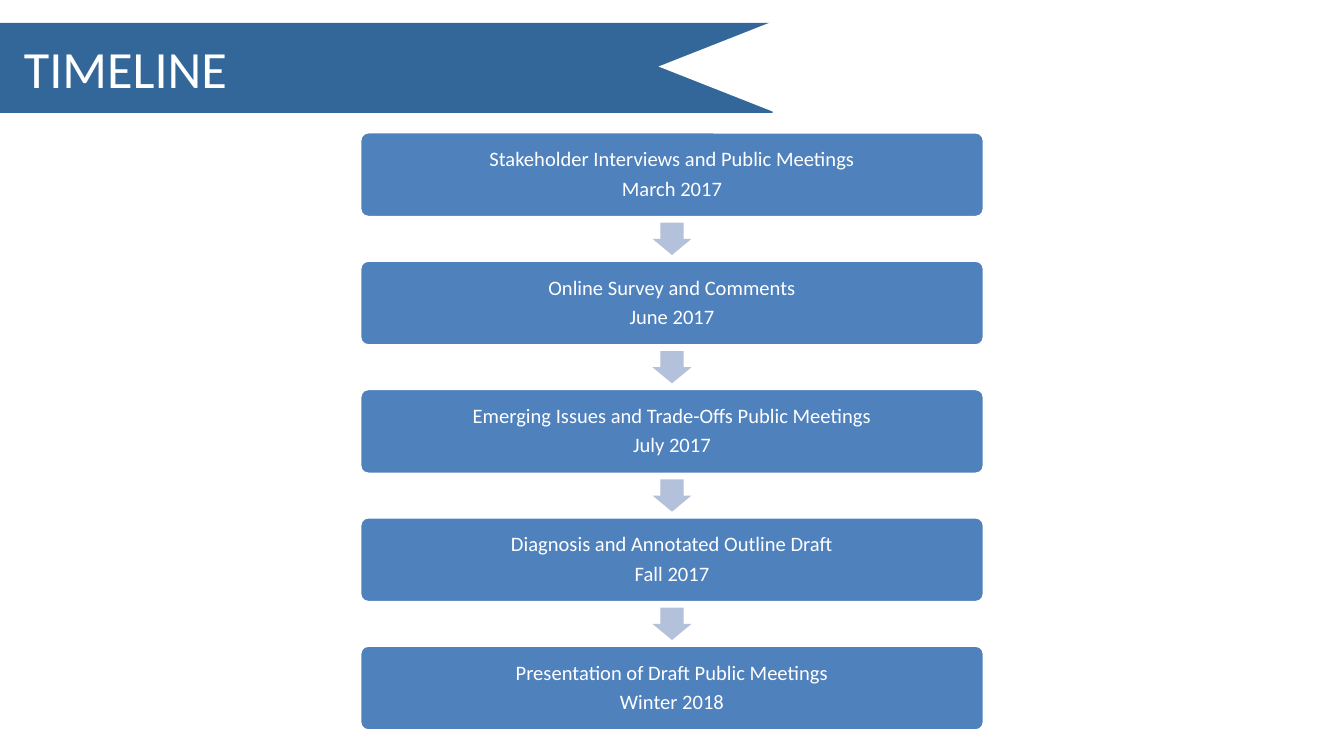
import pptx
import pptx.util
import pptx.dml.color
import pptx.enum.shapes
import pptx.enum.text

Inches, Pt = pptx.util.Inches, pptx.util.Pt
SHAPE = pptx.enum.shapes.MSO_SHAPE
ALIGN = pptx.enum.text.PP_ALIGN

TITLE = "TIMELINE"
STEPS = [
    ("Stakeholder Interviews and Public Meetings", "March 2017"),
    ("Online Survey and Comments", "June 2017"),
    ("Emerging Issues and Trade-Offs Public Meetings", "July 2017"),
    ("Diagnosis and Annotated Outline Draft", "Fall 2017"),
    ("Presentation of Draft Public Meetings", "Winter 2018"),
]
COLORS = {"banner": "336699", "step": "4F81BD", "arrow": "B3C1DB", "white": "FFFFFF"}
FONT = "Calibri"

SLIDE_WIDTH = 10
SLIDE_HEIGHT = SLIDE_WIDTH * 9 / 16
CENTER_X = SLIDE_WIDTH / 2
FIRST_TOP, LAST_TOP = 0.98, 4.8
STEP_PITCH = (LAST_TOP - FIRST_TOP) / (len(STEPS) - 1)
STEP_WIDTH, STEP_HEIGHT = 4.65, 0.64
ARROW_LENGTH, ARROW_WIDTH = 0.24, 0.29


def rgb(name):
    return pptx.dml.color.RGBColor.from_string(COLORS[name])


def add_filled(page, kind, left, top, width, height, color):
    shape = page.shapes.add_shape(
        kind, Inches(left), Inches(top), Inches(width), Inches(height))
    shape.shadow.inherit = False
    shape.fill.solid()
    shape.fill.fore_color.rgb = rgb(color)
    shape.line.fill.background()
    return shape


def style_text(para, size):
    for span in para.runs:
        span.font.name = FONT
        span.font.size = Pt(size)
        span.font.color.rgb = rgb("white")


def add_banner(page):
    add_filled(page, SHAPE.RECTANGLE, -0.17, 0.17, 5.92, 0.67, "banner")
    notch = add_filled(page, SHAPE.ISOSCELES_TRIANGLE, 4.99, 0.07, 0.67, 0.85, "white")
    notch.rotation = 270
    title = page.shapes.add_textbox(Inches(0.08), Inches(0.17), Inches(4.81), Inches(0.67))
    frame = title.text_frame
    frame.word_wrap = True
    frame.vertical_anchor = pptx.enum.text.MSO_ANCHOR.MIDDLE
    frame.text = TITLE
    style_text(frame.paragraphs[0], 28)


def add_step(page, top, lines):
    box = add_filled(page, SHAPE.ROUNDED_RECTANGLE, CENTER_X - STEP_WIDTH / 2, top,
                     STEP_WIDTH, STEP_HEIGHT, "step")
    box.adjustments[0] = 0.1
    box.line.color.rgb = rgb("white")
    box.line.width = Pt(2)
    frame = box.text_frame
    frame.word_wrap = True
    frame.vertical_anchor = pptx.enum.text.MSO_ANCHOR.MIDDLE
    frame.margin_left = frame.margin_right = Inches(0.05)
    frame.margin_top = frame.margin_bottom = Inches(0.05)
    frame.text = "\n".join(lines)
    for para in frame.paragraphs:
        para.alignment = ALIGN.CENTER
        para.line_spacing = 0.9
        para.space_after = Pt(3.85)
        style_text(para, 11)


def add_down_arrow(page, middle):
    arrow = add_filled(page, SHAPE.RIGHT_ARROW, CENTER_X - ARROW_LENGTH / 2,
                       middle - ARROW_WIDTH / 2, ARROW_LENGTH, ARROW_WIDTH, "arrow")
    arrow.rotation = 90
    arrow.adjustments[0] = 0.6
    arrow.adjustments[1] = 0.5


def main():
    deck = pptx.Presentation()
    deck.slide_width, deck.slide_height = Inches(SLIDE_WIDTH), Inches(SLIDE_HEIGHT)
    page = deck.slides.add_slide(deck.slide_layouts[6])
    add_banner(page)
    for index, lines in enumerate(STEPS):
        top = FIRST_TOP + index * STEP_PITCH
        if index:
            add_down_arrow(page, top - (STEP_PITCH - STEP_HEIGHT) / 2)
        add_step(page, top, lines)
    deck.save("out.pptx")


if __name__ == "__main__":
    main()
